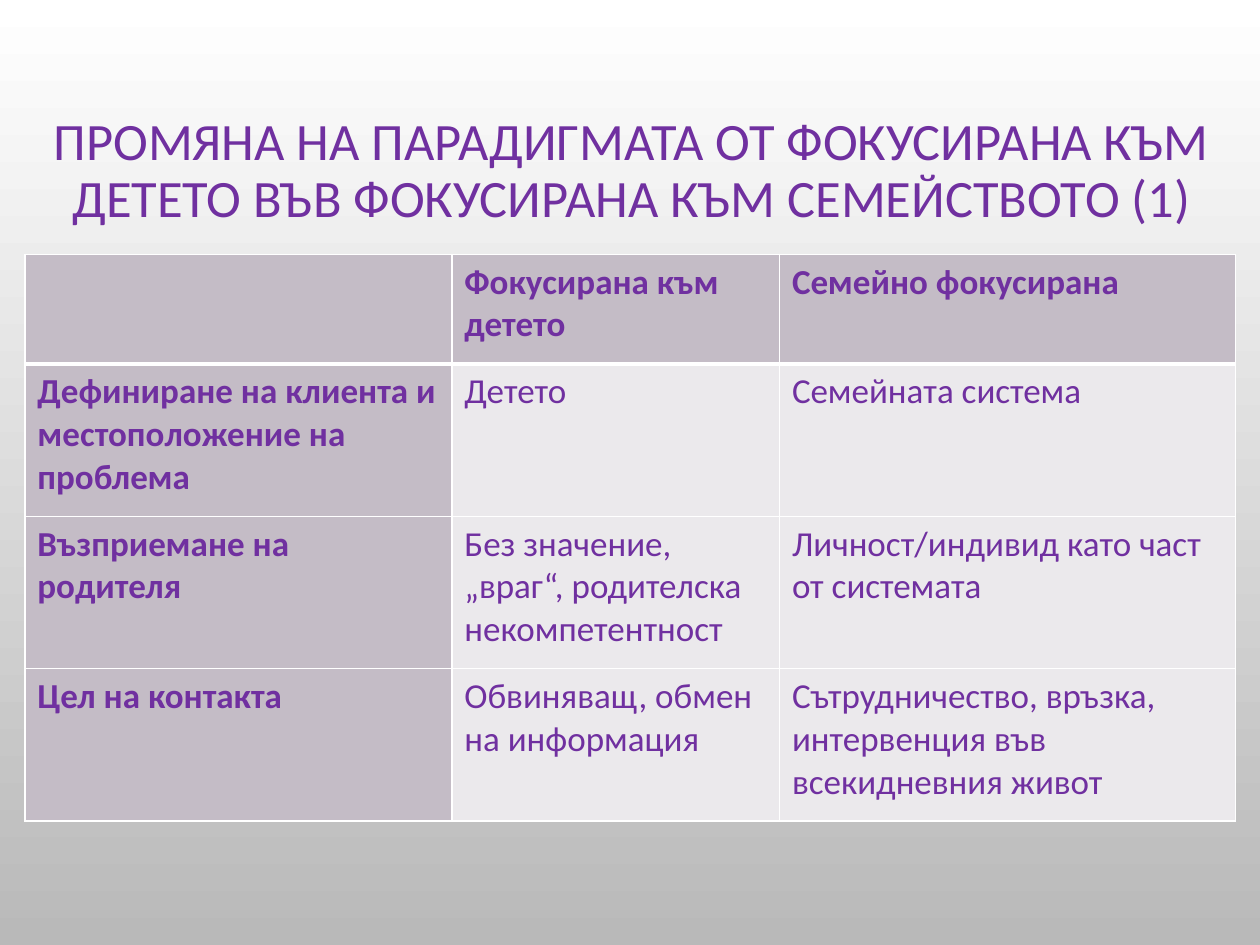
from lxml import etree
from pptx import Presentation
from pptx.dml.color import RGBColor
from pptx.enum import text
from pptx.oxml import ns
from pptx.util import Pt

TITLE = "ПРОМЯНА НА ПАРАДИГМАТА ОТ ФОКУСИРАНА КЪМ ДЕТЕТО ВЪВ ФОКУСИРАНА КЪМ СЕМЕЙСТВОТО (1)"
ROWS = [
    ("", "Фокусирана към детето", "Семейно фокусирана"),
    ("Дефиниране на клиента и местоположение на проблема", "Детето", "Семейната система"),
    ("Възприемане на родителя", "Без значение, „враг“, родителска некомпетентност",
     "Личност/индивид като част от системата"),
    ("Цел на контакта", "Обвиняващ, обмен на информация",
     "Сътрудничество, връзка, интервенция във всекидневния живот"),
]
WIDTHS = (244, 187.2, 260.7)
HEAD, BODY = 62.6, 87.1

PURPLE = RGBColor(0x70, 0x30, 0xA0)
MAUVE = RGBColor(0xC4, 0xBC, 0xC6)
PALE = RGBColor(0xEB, 0xE9, 0xEC)
WHITE = RGBColor(0xFF, 0xFF, 0xFF)
GRAY = RGBColor(0xB9, 0xB9, 0xB9)


def style(par, size, bold=False):
    for run in par.runs:
        font = run.font
        font.name, font.size, font.bold = "Calibri", Pt(size), bold
        font.color.rgb = PURPLE


def border(cell, side, width):
    props = cell._tc.get_or_add_tcPr()
    line = etree.SubElement(props, ns.qn("a:ln" + side), w=str(Pt(width)))
    fill = etree.SubElement(line, ns.qn("a:solidFill"))
    etree.SubElement(fill, ns.qn("a:srgbClr"), val=str(WHITE))


def paint(slide):
    fill = slide.background.fill
    fill.gradient()
    fill.gradient_angle = 270
    for stop, color in zip(fill.gradient_stops, (WHITE, GRAY)):
        stop.color.rgb = color


def add_title(slide):
    frame = slide.shapes.add_textbox(Pt(15), Pt(35.3), Pt(692), Pt(126)).text_frame
    frame.word_wrap = True
    frame.vertical_anchor = text.MSO_ANCHOR.MIDDLE
    frame.text = TITLE
    par = frame.paragraphs[0]
    par.alignment = text.PP_ALIGN.CENTER
    par.line_spacing = 0.9
    style(par, 30)


def add_grid(slide):
    high = HEAD + BODY * (len(ROWS) - 1)
    table = slide.shapes.add_table(len(ROWS), len(WIDTHS), Pt(14.2), Pt(145.4),
                                   Pt(sum(WIDTHS)), Pt(high)).table
    for col, width in zip(table.columns, WIDTHS):
        col.width = Pt(width)
    for r, row in enumerate(ROWS):
        table.rows[r].height = Pt(BODY if r else HEAD)
        for c, words in enumerate(row):
            cell = table.cell(r, c)
            label = r == 0 or c == 0
            cell.text = words
            style(cell.text_frame.paragraphs[0], 20, label)
            for side in "LRTB":
                thick = (r, side) in ((0, "B"), (1, "T"))
                border(cell, side, 3 if thick else 1)
            cell.fill.solid()
            cell.fill.fore_color.rgb = MAUVE if label else PALE


def main():
    deck = Presentation()
    deck.slide_width, deck.slide_height = Pt(720), Pt(540)
    slide = deck.slides.add_slide(deck.slide_layouts[6])
    paint(slide)
    add_title(slide)
    add_grid(slide)
    deck.save("out.pptx")


if __name__ == "__main__":
    main()
